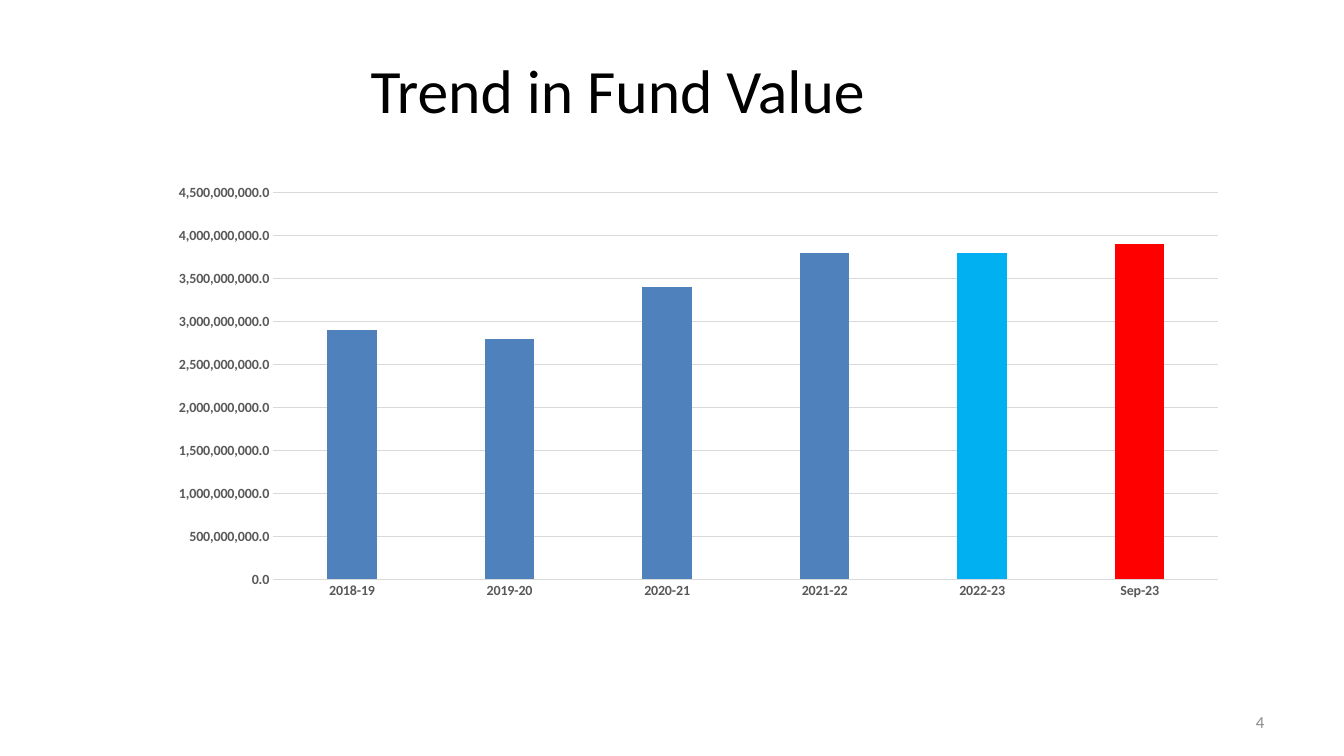
"""Build a slide with a column chart of the trend in fund value."""
from pptx import Presentation
from pptx.chart import data as chart_data
from pptx.dml.color import RGBColor
from pptx.enum import chart as chart_enum, text
from pptx.util import Inches, Pt

FONT = "Calibri"
BLACK = RGBColor(0x00, 0x00, 0x00)
LABEL_GREY = RGBColor(0x59, 0x59, 0x59)
NUMBER_GREY = RGBColor(0x8C, 0x8C, 0x8C)
LINE_GREY = RGBColor(0xD9, 0xD9, 0xD9)
BLUE = RGBColor(0x4F, 0x81, 0xBD)
SKY = RGBColor(0x00, 0xB0, 0xF0)
RED = RGBColor(0xFF, 0x00, 0x00)

BILLION = 1_000_000_000
FUND_VALUES = {
    "2018-19": 2.9,
    "2019-20": 2.8,
    "2020-21": 3.4,
    "2021-22": 3.8,
    "2022-23": 3.8,
    "Sep-23": 3.9,
}
HIGHLIGHTS = {4: SKY, 5: RED}


def style_font(font, size, color, bold=False):
    """Set the typeface, size, colour and weight of a font."""
    font.name = FONT
    font.size = Pt(size)
    font.color.rgb = color
    font.bold = bold


def write_text(box, content, *, size, color, align):
    """Put one formatted, vertically centred paragraph in a box."""
    frame = box.text_frame
    frame.word_wrap = True
    frame.auto_size = text.MSO_AUTO_SIZE.NONE
    frame.vertical_anchor = text.MSO_ANCHOR.MIDDLE
    para = frame.paragraphs[0]
    para.alignment = align
    span = para.add_run()
    span.text = content
    style_font(span.font, size, color)


def add_title(page, content):
    """Place and fill the title placeholder."""
    title = page.shapes.title
    title.left, title.top = Inches(0.54), Inches(0.26)
    title.width, title.height = Inches(11.18), Inches(1.25)
    write_text(title, content, size=44, color=BLACK, align=text.PP_ALIGN.CENTER)


def add_page_number(page, number):
    """Add the page number at the bottom right."""
    box = page.shapes.add_textbox(
        Inches(9.53), Inches(6.96), Inches(3.11), Inches(0.4))
    write_text(box, number, size=12, color=NUMBER_GREY, align=text.PP_ALIGN.RIGHT)


def style_line(line):
    """Make a chart line thin and light grey."""
    line.color.rgb = LINE_GREY
    line.width = Pt(0.75)


def style_axes(chart):
    """Format the labels, lines and scale of both axes."""
    for axis in (chart.category_axis, chart.value_axis):
        axis.major_tick_mark = chart_enum.XL_TICK_MARK.NONE
        axis.minor_tick_mark = chart_enum.XL_TICK_MARK.NONE
        style_font(axis.tick_labels.font, 10, LABEL_GREY, bold=True)
    style_line(chart.category_axis.format.line)
    values = chart.value_axis
    values.minimum_scale = 0
    values.maximum_scale = 4.5 * BILLION
    values.major_unit = 0.5 * BILLION
    values.tick_labels.number_format = "#,##0.0"
    values.tick_labels.number_format_is_linked = False
    values.format.line.fill.background()
    values.has_major_gridlines = True
    style_line(values.major_gridlines.format.line)


def fill_solid(part, color):
    """Give a chart part a solid fill."""
    part.format.fill.solid()
    part.format.fill.fore_color.rgb = color


def add_fund_chart(page):
    """Add the fund value columns with the latest two highlighted."""
    table = chart_data.CategoryChartData()
    table.categories = list(FUND_VALUES)
    table.add_series(
        "Series 1", [round(value * BILLION) for value in FUND_VALUES.values()])
    chart = page.shapes.add_chart(
        chart_enum.XL_CHART_TYPE.COLUMN_CLUSTERED,
        Inches(1.56), Inches(1.75), Inches(10.74), Inches(4.28), table).chart
    chart.has_title = False
    chart.has_legend = False
    style_font(chart.font, 10, BLACK)
    style_axes(chart)
    plot = chart.plots[0]
    plot.vary_by_categories = False
    plot.gap_width = 219
    plot.overlap = -27
    series = plot.series[0]
    series.invert_if_negative = False
    fill_solid(series, BLUE)
    for index, color in HIGHLIGHTS.items():
        fill_solid(series.points[index], color)


def main():
    """Create the deck and save it."""
    deck = Presentation()
    deck.slide_width, deck.slide_height = Inches(13.33), Inches(7.5)
    page = deck.slides.add_slide(deck.slide_layouts[5])
    add_title(page, "Trend in Fund Value")
    add_page_number(page, "4")
    add_fund_chart(page)
    deck.save("out.pptx")


if __name__ == "__main__":
    main()
